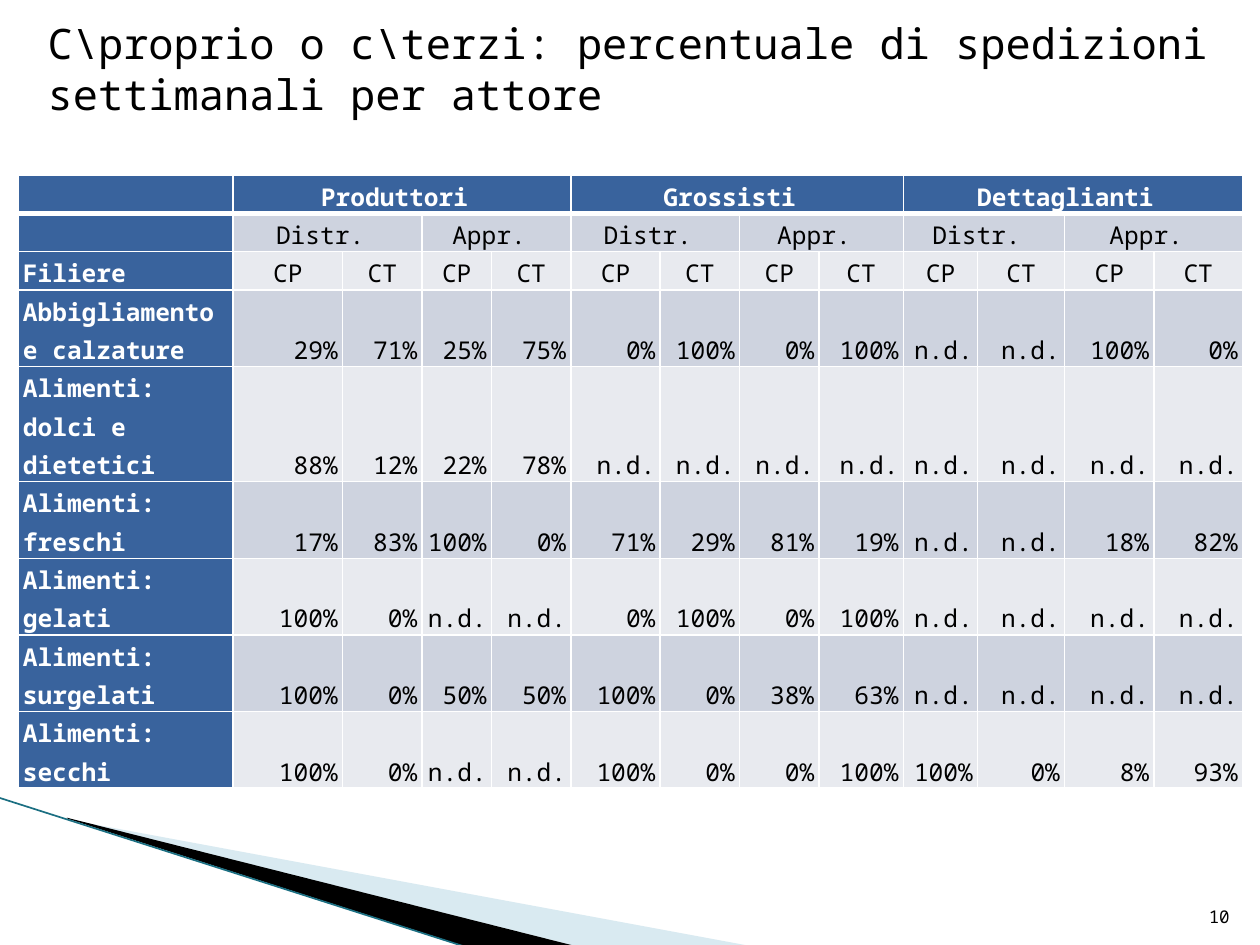
from lxml.etree import SubElement
from pptx import Presentation
from pptx.dml.color import RGBColor
from pptx.enum.shapes import MSO_CONNECTOR
from pptx.enum.text import MSO_ANCHOR, MSO_AUTO_SIZE, PP_ALIGN
from pptx.oxml.ns import qn
from pptx.util import Pt

FONT = "Noto Sans Mono"
BLUE, BAND, LIGHT = "39639D", "CED3DF", "E8EAEF"


def rgb(value):
    return RGBColor.from_string(value)


def add_text(p, text, size, color="000000", bold=False):
    r = p.add_run()
    r.text = text
    r.font.name, r.font.size, r.font.bold = FONT, Pt(size), bold
    r.font.color.rgb = rgb(color)


prs = Presentation()
prs.slide_width, prs.slide_height = Pt(720), Pt(540)
s = prs.slides.add_slide(prs.slide_layouts[5])

# Corner wedges
wedges = [
    ("A0CBDC", [(39.6, 468.5), (428.4, 540.5), (328.5, 540.5), (39.6, 468)]),
    ("000000", [(38.2, 467.3), (329, 540.7), (267.8, 541.4), (38.9, 468)]),
]
for color, points in wedges:
    points = [(Pt(x), Pt(y)) for x, y in points]
    builder = s.shapes.build_freeform(*points[0])
    builder.add_line_segments(points[1:])
    sp = builder.convert_to_shape()
    sp.shadow.inherit = False
    sp.fill.solid()
    sp.fill.fore_color.rgb = rgb(color)
    sp.line.fill.background()
    if color == "A0CBDC":
        clr = sp._element.spPr.find(qn("a:solidFill"))[0]
        SubElement(clr, qn("a:alpha"), val="40000")

# Corner line
line = s.shapes.add_connector(MSO_CONNECTOR.STRAIGHT, Pt(-0.7), Pt(455.8), Pt(267.1), Pt(541.4))
line.line.color.rgb = rgb("1B6F82")
line.line.width = Pt(0.95)
SubElement(line._element.spPr, qn("a:effectLst"))

# Table content
groups = ["Produttori ", "Grossisti ", "Dettaglianti "]
flows = ["Distr. ", "Appr. "]
supply_chains = [
    ("Abbigliamento e calzature", "29% 71% 25% 75% 0% 100% 0% 100% n.d. n.d. 100% 0%"),
    ("Alimenti: dolci e dietetici", "88% 12% 22% 78% n.d. n.d. n.d. n.d. n.d. n.d. n.d. n.d."),
    ("Alimenti: freschi", "17% 83% 100% 0% 71% 29% 81% 19% n.d. n.d. 18% 82%"),
    ("Alimenti: gelati", "100% 0% n.d. n.d. 0% 100% 0% 100% n.d. n.d. n.d. n.d."),
    ("Alimenti: surgelati", "100% 0% 50% 50% 100% 0% 38% 63% n.d. n.d. n.d. n.d."),
    ("Alimenti: secchi", "100% 0% n.d. n.d. 100% 0% 0% 100% 100% 0% 8% 93%"),
]
rows = [[""], [""], ["Filiere"] + ["CP", "CT"] * 6]
for group in groups:
    rows[0] += [group, "", "", ""]
    for flow in flows:
        rows[1] += [flow, ""]
rows += [[name] + values.split() for name, values in supply_chains]

# Table grid: each row is as tall as its lines of text
widths = [122.8, 62.6, 45.4, 39.7, 45.4, 51, 45.4, 45.4, 48.2, 42.5, 49.7, 51, 50.7]
heights = [21.9 * lines for lines in [1, 1, 1, 2, 3, 2, 2, 2, 2]]
table = s.shapes.add_table(len(rows), len(widths), Pt(10.4), Pt(100.1),
                           Pt(sum(widths)), Pt(sum(heights))).table
for column, width in zip(table.columns, widths):
    column.width = Pt(width)
for row, height in zip(table.rows, heights):
    row.height = Pt(height)
for i, span in enumerate([4, 2]):
    for j in range(1, len(widths), span):
        table.cell(i, j).merge(table.cell(i, j + span - 1))

# Table cells
for i, row in enumerate(rows):
    for j, text in enumerate(row):
        cell = table.cell(i, j)
        header = i == 0 or j == 0
        cell.margin_left = cell.margin_right = Pt(2.7)
        cell.margin_top = cell.margin_bottom = 0
        cell.vertical_anchor = MSO_ANCHOR.MIDDLE if i == 0 else MSO_ANCHOR.BOTTOM
        for side in ["L", "R", "T", "B"]:
            thick = (i, side) in [(0, "B"), (1, "T")]
            ln = SubElement(cell._tc.get_or_add_tcPr(), qn("a:ln" + side),
                            w=str(Pt(3 if thick else 1)))
            SubElement(SubElement(ln, qn("a:solidFill")), qn("a:srgbClr"), val="FFFFFF")
        cell.fill.solid()
        cell.fill.fore_color.rgb = rgb(BLUE if header else BAND if i % 2 else LIGHT)
        p = cell.text_frame.paragraphs[0]
        p.line_spacing = 1.15
        p.font.size = Pt(14)
        if j == 0:
            p.alignment = PP_ALIGN.LEFT
        else:
            p.alignment = PP_ALIGN.CENTER if i < 3 else PP_ALIGN.RIGHT
        if text:
            add_text(p, text, 14, "FFFFFF" if header else "000000", header)
        else:
            SubElement(p._p, qn("a:endParaRPr"), sz="1400")

# Title
title = s.shapes.title
title.left, title.top, title.width, title.height = Pt(20), Pt(6.5), Pt(692), Pt(36)
tf = title.text_frame
tf.word_wrap = True
tf.auto_size = MSO_AUTO_SIZE.SHAPE_TO_FIT_TEXT
tf.vertical_anchor = MSO_ANCHOR.TOP
p = tf.paragraphs[0]
p.alignment = PP_ALIGN.LEFT
add_text(p, "C\\proprio o c\\terzi: percentuale di spedizioni settimanali per attore", 24)

# Slide number
tf = s.shapes.add_textbox(Pt(681), Pt(504.7), Pt(28.8), Pt(28.8)).text_frame
tf.word_wrap = True
tf.vertical_anchor = MSO_ANCHOR.BOTTOM
p = tf.paragraphs[0]
p.alignment = PP_ALIGN.RIGHT
add_text(p, "10", 10)

prs.save("out.pptx")
